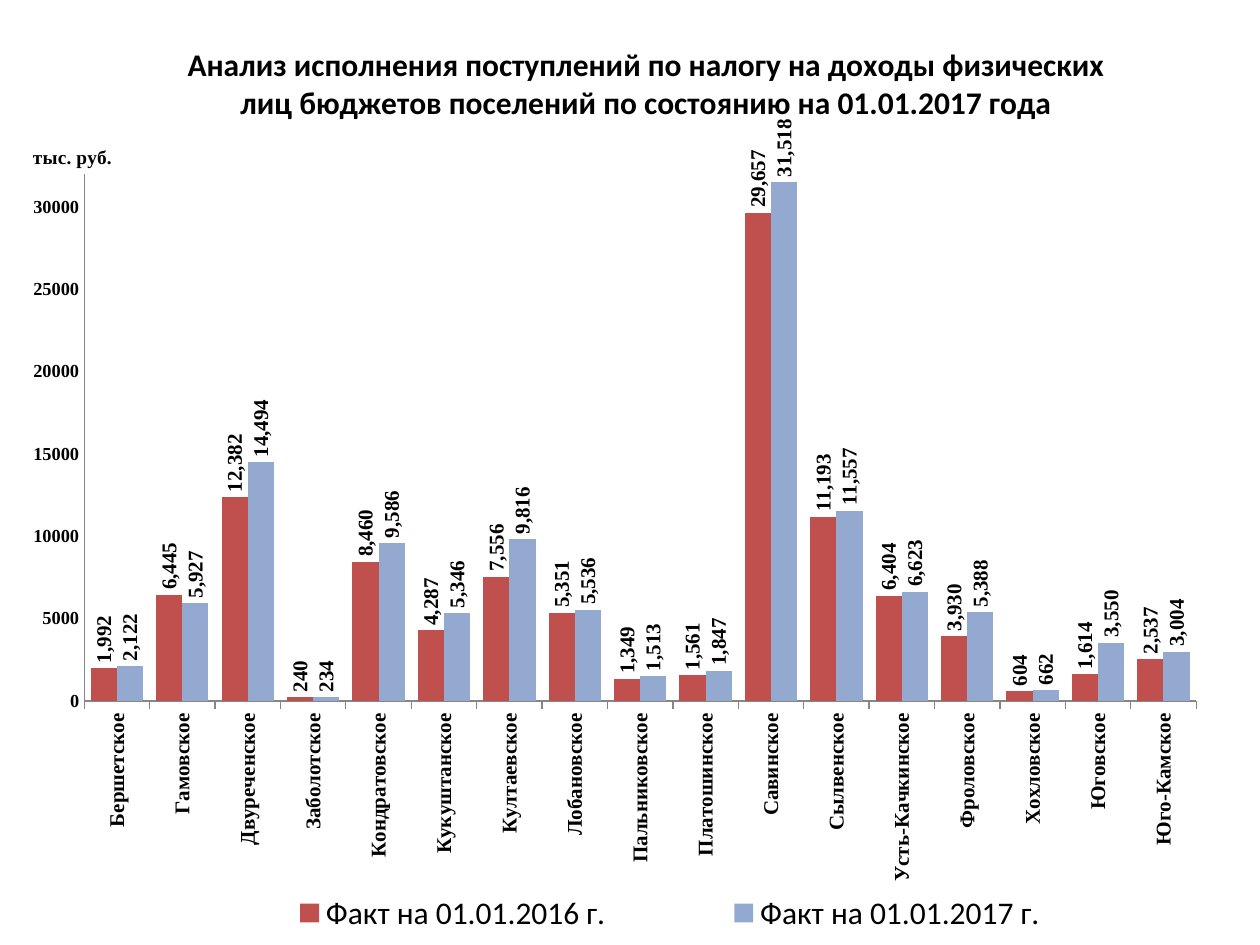
from dataclasses import dataclass
from lxml.etree import SubElement
from pptx import Presentation
from pptx.chart.data import CategoryChartData
from pptx.dml.color import RGBColor
from pptx.enum.chart import (XL_CHART_TYPE, XL_LABEL_POSITION, XL_LEGEND_POSITION,
                             XL_TICK_LABEL_POSITION, XL_TICK_MARK)
from pptx.oxml import parse_xml
from pptx.oxml.ns import nsdecls, qn
from pptx.util import Inches, Pt


@dataclass(frozen=True)
class Theme:
    sans: str = "Calibri"
    serif: str = "Times New Roman"
    ink: str = "000000"
    axis: str = "868686"
    bars: tuple = ("C0504D", "93A9CF")
    head: float = 18
    key: float = 18
    label: float = 12
    unit: float = 11
    scale: float = 10.5


THEME = Theme()
WIDE, HIGH = Inches(10), Inches(7.5)
TITLE = ("Анализ исполнения поступлений по налогу на доходы физических "
         "лиц бюджетов поселений по состоянию на 01.01.2017 года")
UNIT = "тыс. руб."
NAMES = ("Бершетское", "Гамовское", "Двуреченское", "Заболотское", "Кондратовское",
         "Кукуштанское", "Култаевское", "Лобановское", "Пальниковское",
         "Платошинское", "Савинское", "Сылвенское", "Усть-Качкинское",
         "Фроловское", "Хохловское", "Юговское", "Юго-Камское")
FACTS = {
    "Факт на 01.01.2016 г.": (1992, 6445, 12382, 240, 8460, 4287, 7556, 5351, 1349,
                              1561, 29657, 11193, 6404, 3930, 604, 1614, 2537),
    "Факт на 01.01.2017 г.": (2122, 5927, 14494, 234, 9586, 5346, 9816, 5536, 1513,
                              1847, 31518, 11557, 6623, 5388, 662, 3550, 3004),
}


def style(font, face, size, bold=True):
    form = {"name": face, "size": Pt(size), "bold": bold}
    for key, value in form.items():
        setattr(font, key, value)
    font.color.rgb = RGBColor.from_string(THEME.ink)


def turn(part, angle):
    """Rotate the text of an axis or a set of labels, in degrees."""
    body = part._element.find(qn("c:txPr")).find(qn("a:bodyPr"))
    body.set("rot", str(angle * 60000))
    body.set("vert", "horz")


def layout(node, x, y, w=None, h=None, inner=False):
    """Place a chart part by shares of the chart's size."""
    for old in node.findall(qn("c:layout")):
        node.remove(old)
    frame = parse_xml(f"<c:layout {nsdecls('c')}><c:manualLayout/></c:layout>")
    rows = [("layoutTarget", "inner")] if inner else []
    rows += [("xMode", "edge"), ("yMode", "edge"), ("x", x), ("y", y)]
    rows += [(key, size) for key, size in (("w", w), ("h", h)) if size]
    for key, value in rows:
        SubElement(frame[0], qn(f"c:{key}")).set("val", str(value))
    # Layout follows these parts in the schema
    lead = [c for c in node if c.tag in (qn("c:tx"), qn("c:legendPos"))]
    node.insert(node.index(lead[-1]) + 1 if lead else 0, frame)


def caption(title, text, face, size, x, y):
    frame = title.text_frame
    frame.text = text
    style(frame.paragraphs[0].runs[0].font, face, size)
    layout(title._element, x, y)


def axes(chart):
    cat, val = chart.category_axis, chart.value_axis
    forms = (
        (cat, THEME.label, {"major_tick_mark": XL_TICK_MARK.OUTSIDE,
                            "tick_label_position": XL_TICK_LABEL_POSITION.LOW}),
        (val, THEME.scale, {"major_tick_mark": XL_TICK_MARK.NONE, "minimum_scale": 0,
                            "maximum_scale": 32000, "major_unit": 5000}),
    )
    for axis, size, form in forms:
        form = {"has_major_gridlines": False,
                "minor_tick_mark": XL_TICK_MARK.NONE, **form}
        for key, value in form.items():
            setattr(axis, key, value)
        style(axis.tick_labels.font, THEME.serif, size)
        axis.format.line.color.rgb = RGBColor.from_string(THEME.axis)
        axis.format.line.width = Pt(0.75)
    turn(cat, -90)
    val.tick_labels.number_format = "0"
    val.tick_labels.number_format_is_linked = False
    caption(val.axis_title, UNIT, THEME.serif, THEME.unit, 0.012, 0.147)
    body = val.axis_title.text_frame._txBody.find(qn("a:bodyPr"))
    body.set("rot", "0")
    body.set("vert", "horz")


def bars(plot):
    plot.gap_width, plot.overlap, plot.vary_by_categories = 50, 0, False
    for row, color in zip(plot.series, THEME.bars):
        row.format.fill.solid()
        row.format.fill.fore_color.rgb = RGBColor.from_string(color)
        row.invert_if_negative = False
        tags = row.data_labels
        form = {"show_value": True, "number_format": "#,##0",
                "number_format_is_linked": False,
                "position": XL_LABEL_POSITION.OUTSIDE_END}
        for key, value in form.items():
            setattr(tags, key, value)
        style(tags.font, THEME.serif, THEME.label)
        turn(tags, -90)


def legend(chart):
    chart.has_legend = True
    key = chart.legend
    key.position = XL_LEGEND_POSITION.RIGHT
    key.include_in_layout = False
    style(key.font, THEME.sans, THEME.key, False)
    layout(key._element, 0.14, 0.945, 0.82, 0.05)


def report(slide, left, top, width, height):
    """Draw the whole chart in a box given as shares of the slide."""
    data = CategoryChartData()
    data.categories = NAMES
    for name, values in FACTS.items():
        data.add_series(name, values)
    box = (int(WIDE * left), int(HIGH * top), int(WIDE * width), int(HIGH * height))
    chart = slide.shapes.add_chart(XL_CHART_TYPE.COLUMN_CLUSTERED, *box, data).chart
    style(chart.font, THEME.sans, 10, False)
    # Heading
    chart.has_title = True
    caption(chart.chart_title, TITLE, THEME.sans, THEME.head, 0.14, 0.035)
    # Plot and key
    axes(chart)
    bars(chart.plots[0])
    legend(chart)
    layout(chart._chartSpace.chart.plotArea, 0.058, 0.182, 0.934, 0.562, True)


def main():
    deck = Presentation()
    deck.slide_width, deck.slide_height = WIDE, HIGH
    slide = deck.slides.add_slide(deck.slide_layouts[6])
    report(slide, 0.012, 0.004, 0.945, 0.992)
    deck.save("out.pptx")


if __name__ == "__main__":
    main()
